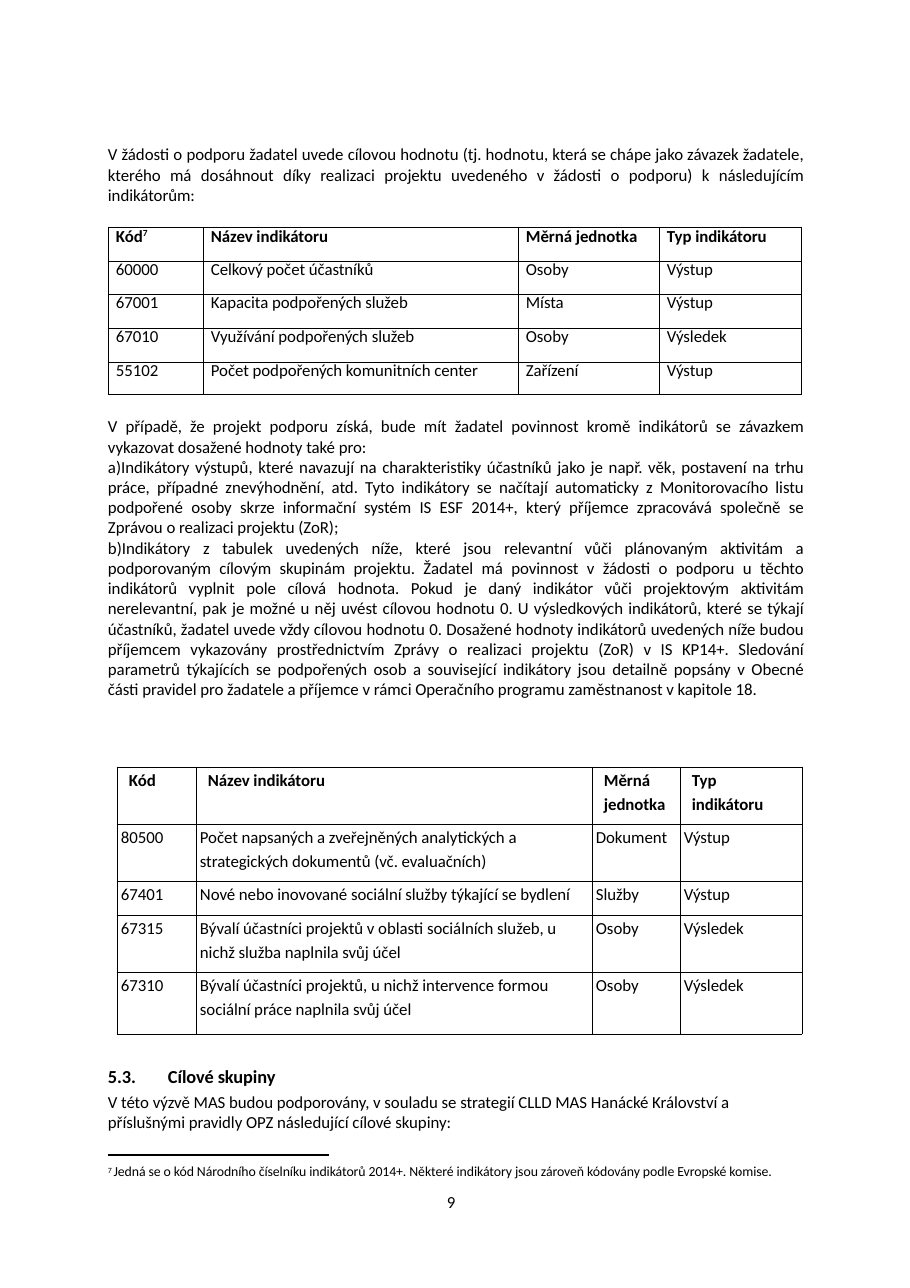
"""Build a Czech grant-call page with two indicator tables, a list and a footnote."""
from dataclasses import dataclass

from lxml import etree
from pptx import Presentation
from pptx.dml.color import RGBColor
from pptx.enum.shapes import MSO_CONNECTOR
from pptx.enum.text import MSO_ANCHOR, MSO_AUTO_SIZE, PP_ALIGN
from pptx.oxml.ns import qn
from pptx.util import Emu, Pt

LEFT, JUSTIFY = PP_ALIGN.LEFT, PP_ALIGN.JUSTIFY
TOP = MSO_ANCHOR.TOP
NO_AUTOFIT = MSO_AUTO_SIZE.NONE
STRAIGHT = MSO_CONNECTOR.STRAIGHT
EMU_PER_PX = 8298
FONT = "Calibri"
BLACK = "000000"
TRACKING = "-5"
BORDER_SIDES = ("a:lnL", "a:lnR", "a:lnT", "a:lnB")


@dataclass(frozen=True)
class Box:
    left: int
    top: int
    width: int
    height: int


@dataclass(frozen=True)
class TextStyle:
    size: float = 11
    bold: bool = False
    align: int = LEFT
    spacing: float = 1.0


@dataclass(frozen=True)
class IndicatorTable:
    box: Box
    columns: tuple[int, ...]
    rows: tuple[int, ...]
    header_inset: int
    body_inset: int
    spacing: float
    cells: tuple[tuple[str, ...], ...]


INTRO = (
    "V žádosti o podporu žadatel uvede cílovou hodnotu (tj. hodnotu, která se chápe jako závazek "
    "žadatele, kterého má dosáhnout díky realizaci projektu uvedeného v žádosti o podporu) "
    "k následujícím indikátorům:"
)
OBLIGATIONS = (
    "V případě, že projekt podporu získá, bude mít žadatel povinnost kromě indikátorů se závazkem "
    "vykazovat dosažené hodnoty také pro:",
    "Indikátory výstupů, které navazují na charakteristiky účastníků jako je např. věk, postavení "
    "na trhu práce, případné znevýhodnění, atd. Tyto indikátory se načítají automaticky "
    "z Monitorovacího listu podpořené osoby skrze informační systém IS ESF 2014+, který příjemce "
    "zpracovává společně se Zprávou o realizaci projektu (ZoR);",
    "Indikátory z tabulek uvedených níže, které jsou relevantní vůči plánovaným aktivitám "
    "a podporovaným cílovým skupinám projektu. Žadatel má povinnost v žádosti o podporu u těchto "
    "indikátorů vyplnit pole cílová hodnota. Pokud je daný indikátor vůči projektovým aktivitám "
    "nerelevantní, pak je možné u něj uvést cílovou hodnotu 0. U výsledkových indikátorů, které "
    "se týkají účastníků, žadatel uvede vždy cílovou hodnotu 0. Dosažené hodnoty indikátorů "
    "uvedených níže budou příjemcem vykazovány prostřednictvím Zprávy o realizaci projektu (ZoR) "
    "v IS KP14+. Sledování parametrů týkajících se podpořených osob a související indikátory jsou "
    "detailně popsány v Obecné části pravidel pro žadatele a příjemce v rámci Operačního programu "
    "zaměstnanost v kapitole 18.",
)
TARGET_GROUPS = (
    "V této výzvě MAS budou podporovány, v souladu se strategií CLLD MAS Hanácké Království "
    "a příslušnými pravidly OPZ následující cílové skupiny:"
)
FOOTNOTE = (
    "Jedná se o kód Národního číselníku indikátorů 2014+. Některé indikátory jsou zároveň "
    "kódovány podle Evropské komise."
)
COMMITTED = IndicatorTable(
    Box(108, 227, 693, 168), (95, 315, 141, 142), (34, 33, 34, 34, 33), 8, 8, Pt(12.8),
    (
        ("Kód", "Název indikátoru", "Měrná jednotka", "Typ indikátoru"),
        ("60000", "Celkový počet účastníků", "Osoby", "Výstup"),
        ("67001", "Kapacita podpořených služeb", "Místa", "Výstup"),
        ("67010", "Využívání podpořených služeb", "Osoby", "Výsledek"),
        ("55102", "Počet podpořených komunitních center", "Zařízení", "Výstup"),
    ),
)
REPORTED = IndicatorTable(
    Box(117, 767, 685, 267), (79, 396, 88, 122), (57, 57, 34, 57, 62), 12, 4, 1.17,
    (
        ("Kód", "Název indikátoru", "Měrná jednotka", "Typ\nindikátoru"),
        ("80500", "Počet napsaných a zveřejněných analytických a strategických dokumentů "
                  "(vč. evaluačních)", "Dokument", "Výstup"),
        ("67401", "Nové nebo inovované sociální služby týkající se bydlení", "Služby", "Výstup"),
        ("67315", "Bývalí účastníci projektů v oblasti sociálních služeb, u nichž služba "
                  "naplnila svůj účel", "Osoby", "Výsledek"),
        ("67310", "Bývalí účastníci projektů, u nichž intervence formou sociální práce "
                  "naplnila svůj účel", "Osoby", "Výsledek"),
    ),
)


def px(length: int) -> Emu:
    """Turn px into EMU."""
    return Emu(length * EMU_PER_PX)


def color(value: str) -> RGBColor:
    """Turn a hex string into a colour."""
    return RGBColor.from_string(value)


def format_run(run, size: float, bold: bool, raise_by: int = 0) -> None:
    """Set font, tracking and an optional superscript percentage."""
    run.font.name, run.font.size, run.font.bold = FONT, Pt(size), bold
    run.font.color.rgb = color(BLACK)
    properties = run.font._element
    properties.set("spc", TRACKING)
    if raise_by:
        properties.set("baseline", str(raise_by * 1000))


def format_paragraphs(frame, style: TextStyle) -> None:
    """Apply one text style to every paragraph of a frame."""
    for paragraph in frame.paragraphs:
        paragraph.alignment, paragraph.line_spacing = style.align, style.spacing
        paragraph.space_before = paragraph.space_after = Pt(0)
        for run in paragraph.runs:
            format_run(run, style.size, style.bold)


def fill_text(shape, box: Box, text: str, style: TextStyle):
    """Place a shape, give it text and return its frame."""
    shape.left, shape.top = px(box.left), px(box.top)
    shape.width, shape.height = px(box.width), px(box.height)
    frame = shape.text_frame
    frame.word_wrap, frame.auto_size, frame.vertical_anchor = True, NO_AUTOFIT, TOP
    frame.margin_left = frame.margin_right = frame.margin_top = frame.margin_bottom = 0
    frame.text = text
    format_paragraphs(frame, style)
    return frame


def add_text(slide, box: Box, text: str, style: TextStyle):
    """Add a text box and return its frame."""
    return fill_text(slide.shapes.add_textbox(0, 0, 0, 0), box, text, style)


def add_heading(slide) -> None:
    """Put the numbered section heading into the title placeholder."""
    frame = fill_text(slide.shapes.title, Box(108, 1065, 697, 23), "5.3.\tCílové skupiny",
                      TextStyle(size=12, bold=True))
    tabs = etree.SubElement(frame.paragraphs[0]._p.get_or_add_pPr(), qn("a:tabLst"))
    etree.SubElement(tabs, qn("a:tab"), pos=str(px(60)), algn="l")


def add_obligations(slide) -> None:
    """Put the lead-in and the lettered list into the body placeholder."""
    frame = fill_text(slide.placeholders[1], Box(108, 416, 696, 290), "\n".join(OBLIGATIONS),
                      TextStyle(align=JUSTIFY))
    for index, paragraph in enumerate(frame.paragraphs):
        properties = paragraph._p.get_or_add_pPr()
        properties.set("marL", "0")
        properties.set("indent", "0")
        if index:
            etree.SubElement(properties, qn("a:buAutoNum"), type="alphaLcParenR")
        else:
            etree.SubElement(properties, qn("a:buNone"))


def add_borders(cell) -> None:
    """Draw a thin black line on each side of a cell."""
    properties = cell._tc.get_or_add_tcPr()
    for side in BORDER_SIDES:
        line = etree.SubElement(properties, qn(side), w=str(Pt(0.5)))
        fill = etree.SubElement(line, qn("a:solidFill"))
        etree.SubElement(fill, qn("a:srgbClr"), val=BLACK)


def add_indicators(slide, spec_table: IndicatorTable):
    """Add an indicator table and return it."""
    box = spec_table.box
    table = slide.shapes.add_table(len(spec_table.rows), len(spec_table.columns), px(box.left),
                                   px(box.top), px(box.width), px(box.height)).table
    table.first_row = table.horz_banding = False
    for column, width in zip(table.columns, spec_table.columns):
        column.width = px(width)
    for index, (row, height) in enumerate(zip(table.rows, spec_table.rows)):
        row.height = px(height)
        is_header = index == 0
        for cell, text in zip(row.cells, spec_table.cells[index]):
            inset = spec_table.header_inset if is_header else spec_table.body_inset
            cell.margin_left = px(inset)
            cell.margin_right = cell.margin_top = cell.margin_bottom = 0
            add_borders(cell)
            cell.fill.background()
            cell.text_frame.text = text
            format_paragraphs(cell.text_frame,
                              TextStyle(bold=is_header, spacing=spec_table.spacing))
    return table


def add_footnote(slide) -> None:
    """Add the footnote rule and its text with a raised mark."""
    rule = slide.shapes.add_connector(STRAIGHT, px(108), px(1155), px(329), px(1155))
    rule.line.color.rgb, rule.line.width = color(BLACK), Pt(0.72)
    etree.SubElement(rule._element.spPr, qn("a:effectLst"))
    frame = add_text(slide, Box(108, 1163, 697, 18), "7 ", TextStyle(size=9))
    mark = frame.paragraphs[0].runs[0]
    format_run(mark, 9, False, 23)
    note = frame.paragraphs[0].add_run()
    note.text = FOOTNOTE
    format_run(note, 9, False)


def main() -> None:
    """Build and save the page."""
    deck = Presentation()
    deck.slide_width, deck.slide_height = px(910), px(1288)
    slide = deck.slides.add_slide(deck.slide_layouts[1])
    add_text(slide, Box(108, 144, 696, 65), INTRO, TextStyle(align=JUSTIFY))
    committed = add_indicators(slide, COMMITTED)
    mark = committed.cell(0, 0).text_frame.paragraphs[0].add_run()
    mark.text = "7"
    format_run(mark, 10.5, True, 32)
    add_obligations(slide)
    add_indicators(slide, REPORTED)
    add_heading(slide)
    add_text(slide, Box(108, 1091, 697, 44), TARGET_GROUPS, TextStyle(spacing=1.02))
    add_footnote(slide)
    add_text(slide, Box(447, 1192, 20, 22), "9", TextStyle())
    deck.save("out.pptx")


if __name__ == "__main__":
    main()
